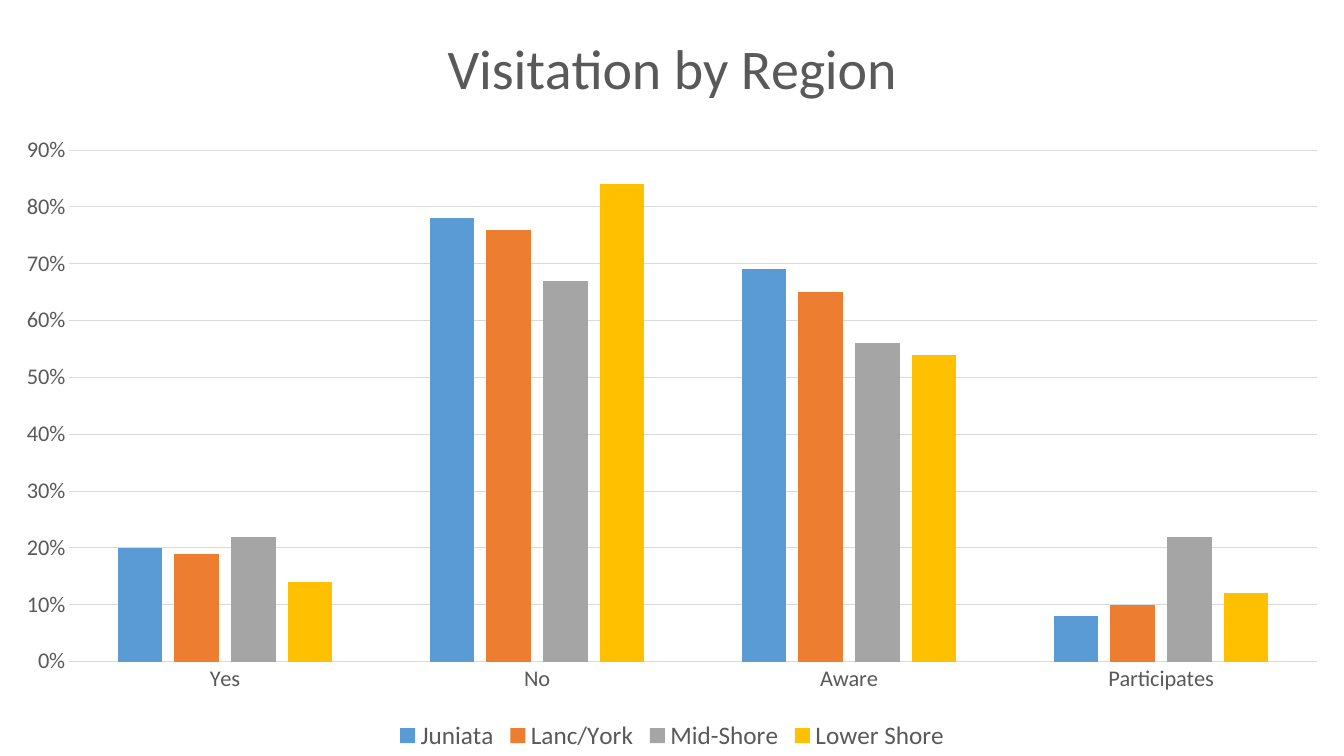
from pptx import Presentation
from pptx.chart.data import CategoryChartData
from pptx.dml.color import RGBColor
from pptx.enum.chart import XL_CHART_TYPE, XL_LEGEND_POSITION, XL_TICK_MARK
from pptx.util import Inches, Pt

COLUMNS = XL_CHART_TYPE.COLUMN_CLUSTERED
BOTTOM = XL_LEGEND_POSITION.BOTTOM
NO_TICK = XL_TICK_MARK.NONE

FONT = "Calibri"
GREY = RGBColor(0x59, 0x59, 0x59)
RULE = RGBColor(0xD9, 0xD9, 0xD9)
BLUE = RGBColor(0x5B, 0x9B, 0xD5)
ORANGE = RGBColor(0xED, 0x7D, 0x31)
SILVER = RGBColor(0xA5, 0xA5, 0xA5)
GOLD = RGBColor(0xFF, 0xC0, 0x00)

WIDTH, HEIGHT = Inches(13.33), Inches(7.5)
ANSWERS = ["Yes", "No", "Aware", "Participates"]
REGIONS = [
    ("Juniata", BLUE, (0.20, 0.78, 0.69, 0.08)),
    ("Lanc/York", ORANGE, (0.19, 0.76, 0.65, 0.10)),
    ("Mid-Shore", SILVER, (0.22, 0.67, 0.56, 0.22)),
    ("Lower Shore", GOLD, (0.14, 0.84, 0.54, 0.12)),
]


def set_font(font, size, color=GREY, bold=False):
    font.name = FONT
    font.size = Pt(size)
    font.bold = bold
    font.color.rgb = color


def put_text(frame, text, **style):
    run = frame.paragraphs[0].add_run()
    run.text = text
    set_font(run.font, **style)


def set_rule(line):
    line.color.rgb = RULE
    line.width = Pt(0.75)


def style_axis(axis):
    axis.major_tick_mark = NO_TICK
    axis.minor_tick_mark = NO_TICK
    set_font(axis.tick_labels.font, 16)


def add_columns(slide):
    data = CategoryChartData(number_format="0%")
    data.categories = ANSWERS
    for name, _, shares in REGIONS:
        data.add_series(name, shares)
    frame = slide.shapes.add_chart(COLUMNS, 0, 0, WIDTH, HEIGHT, data)
    chart = frame.chart

    # Columns
    plot = chart.plots[0]
    plot.vary_by_categories = False
    plot.gap_width = 219
    plot.overlap = -27
    for series, (_, color, _) in zip(plot.series, REGIONS):
        series.format.fill.solid()
        series.format.fill.fore_color.rgb = color
    return chart


def style_axes(chart):
    answers, shares = chart.category_axis, chart.value_axis
    style_axis(answers)
    set_rule(answers.format.line)

    style_axis(shares)
    shares.format.line.fill.background()
    shares.minimum_scale = 0
    shares.maximum_scale = 0.9
    shares.major_unit = 0.1
    shares.tick_labels.number_format = "0%"
    shares.tick_labels.number_format_is_linked = False
    shares.has_major_gridlines = True
    set_rule(shares.major_gridlines.format.line)


def add_legend(chart):
    chart.has_legend = True
    chart.legend.position = BOTTOM
    chart.legend.include_in_layout = False
    set_font(chart.legend.font, 18)


def main():
    deck = Presentation()
    deck.slide_width, deck.slide_height = WIDTH, HEIGHT
    slide = deck.slides.add_slide(deck.slide_layouts[6])

    # Chart with its title, axes and legend
    chart = add_columns(slide)
    chart.has_title = True
    chart.chart_title.include_in_layout = False
    put_text(chart.chart_title.text_frame, "Visitation by Region", size=40)
    style_axes(chart)
    add_legend(chart)

    deck.save("out.pptx")


if __name__ == "__main__":
    main()
